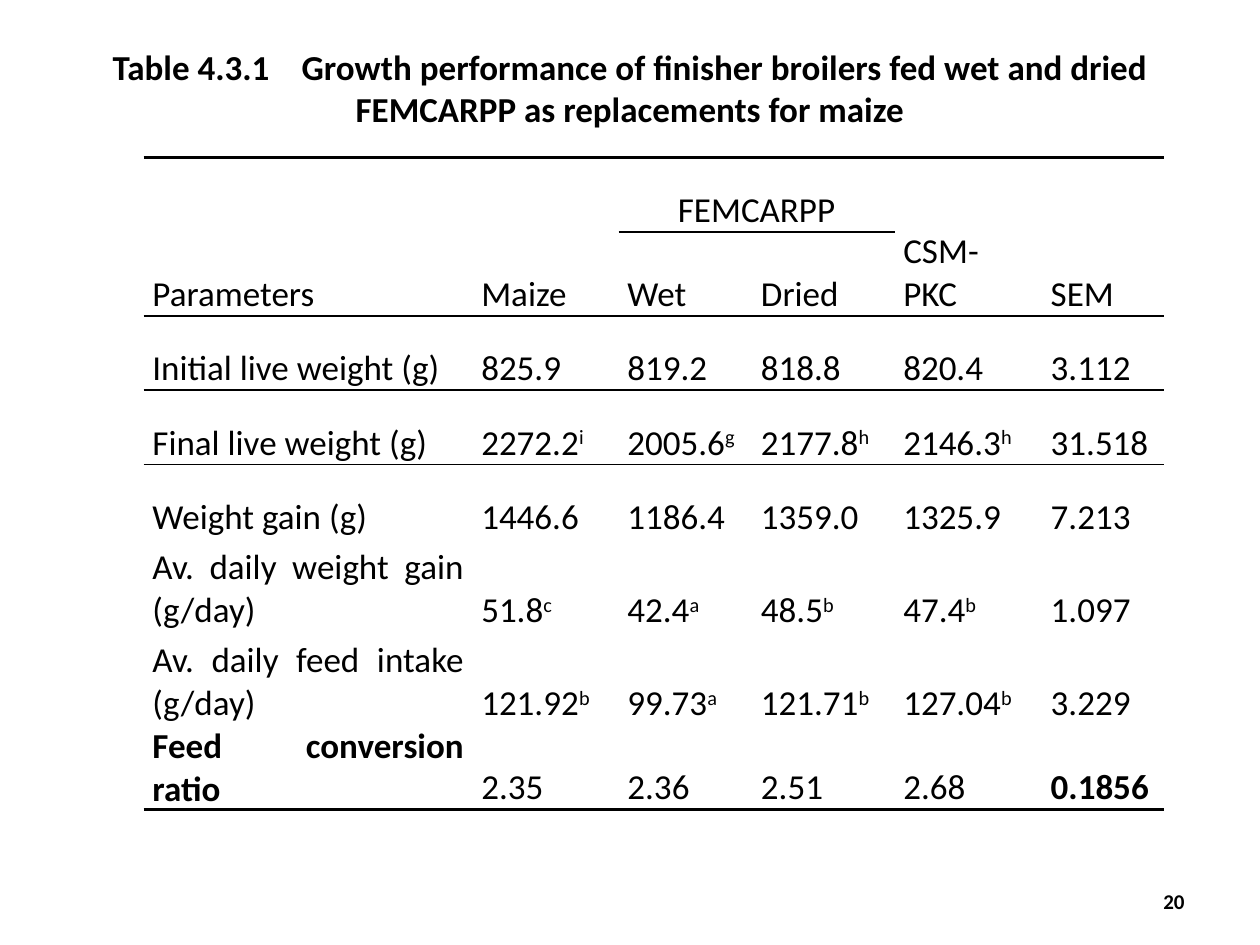
from lxml import etree
from pptx import Presentation, util as u
from pptx.dml.color import RGBColor
from pptx.enum import text
from pptx.oxml.ns import qn

HUES = {"ink": "000000", "paper": "FFFFFF"}
INK = RGBColor.from_string(HUES["ink"])
PAPER = RGBColor.from_string(HUES["paper"])
ALIGN = text.PP_ALIGN
PLAIN = "{2D5ABB26-0587-4C30-8999-92F81FD0307C}"  # no style, no grid


def style(para, size, align, bold=False):
    para.alignment = align
    font = para.font
    font.name, font.size, font.bold = "Calibri", u.Pt(size), bold
    font.color.rgb = INK


def rule(cell, sides):
    """Draw cell borders; sides maps 'T' or 'B', in that order, to points."""
    for side, width in sides.items():
        line = etree.SubElement(cell._tc.get_or_add_tcPr(), qn("a:ln" + side),
                                w=str(u.Pt(width)))
        fill = etree.SubElement(line, qn("a:solidFill"))
        etree.SubElement(fill, qn("a:srgbClr"), val=HUES["ink"])


deck = Presentation()
deck.slide_width, deck.slide_height = u.Inches(10), u.Inches(7.5)
slide = deck.slides.add_slide(deck.slide_layouts[6])

# Title and page number
labels = [
    ("Table 4.3.1\tGrowth performance of finisher broilers fed wet and dried "
     "FEMCARPP as replacements for maize", (0.5, 0.3, 9, 0.79), 20, ALIGN.CENTER),
    ("20", (7.17, 6.95, 2.33, 0.4), 12, ALIGN.RIGHT),
]
for words, place, size, align in labels:
    frame = slide.shapes.add_textbox(*map(u.Inches, place)).text_frame
    frame.word_wrap = True
    frame.vertical_anchor = text.MSO_ANCHOR.MIDDLE
    frame.text = words
    style(frame.paragraphs[0], size, align, True)

# Table contents: ^ starts a superscript
rows = [
    ["Parameters", "Maize", "FEMCARPP", "", "CSM-\nPKC", "SEM"],
    ["", "", "Wet", "Dried", "", ""],
    ["Initial live weight (g)", "825.9", "819.2", "818.8", "820.4", "3.112"],
    ["Final live weight (g)", "2272.2^i", "2005.6^g", "2177.8^h", "2146.3^h", "31.518"],
    ["Weight gain (g)", "1446.6", "1186.4", "1359.0", "1325.9", "7.213"],
    ["Av. daily weight gain (g/day)", "51.8^c", "42.4^a", "48.5^b", "47.4^b", "1.097"],
    ["Av. daily feed intake (g/day)", "121.92^b", "99.73^a", "121.71^b", "127.04^b", "3.229"],
    ["Feed conversion ratio ", "2.35", "2.36", "2.51", "2.68", "0.1856"],
]
widths = [2.61, 1.16, 1.06, 1.13, 1.17, 0.97]
heights = [0.59] * 5 + [0.74] * 2 + [0.59]
edges = {0: {"T": 2, "B": 1}, 1: {"T": 1, "B": 1}, 2: {"T": 1, "B": 1},
         3: {"T": 1}, 7: {"B": 2}}
bolds = {(7, 0), (7, 5)}

# Table grid
table = slide.shapes.add_table(
    len(rows), len(widths), u.Inches(1.14), u.Inches(1.25),
    u.Inches(sum(widths)), u.Inches(sum(heights))).table
table.first_row = table.horz_banding = False
table._tbl.tblPr.find(qn("a:tableStyleId")).text = PLAIN
for col, width in zip(table.columns, widths):
    col.width = u.Inches(width)
for row, height in zip(table.rows, heights):
    row.height = u.Inches(height)

# Heading spans
for col in (0, 1, 4, 5):
    table.cell(0, col).merge(table.cell(1, col))
table.cell(0, 2).merge(table.cell(0, 3))

# Cells
for i, row in enumerate(rows):
    for j, words in enumerate(row):
        cell = table.cell(i, j)
        cell.margin_left = cell.margin_right = u.Inches(0.07)
        cell.margin_top = cell.margin_bottom = 0
        cell.vertical_anchor = text.MSO_ANCHOR.BOTTOM
        rule(cell, edges.get(i, {}))
        cell.fill.solid()
        cell.fill.fore_color.rgb = PAPER
        base, _, mark = words.partition("^")
        cell.text_frame.text = base
        if mark:
            run = cell.text_frame.paragraphs[0].add_run()
            run.text = mark
            run._r.get_or_add_rPr().set("baseline", "30000")
        for para in cell.text_frame.paragraphs:
            align = ALIGN.CENTER if words == "FEMCARPP" else ALIGN.JUSTIFY
            style(para, 20, align, (i, j) in bolds)

deck.save("out.pptx")
